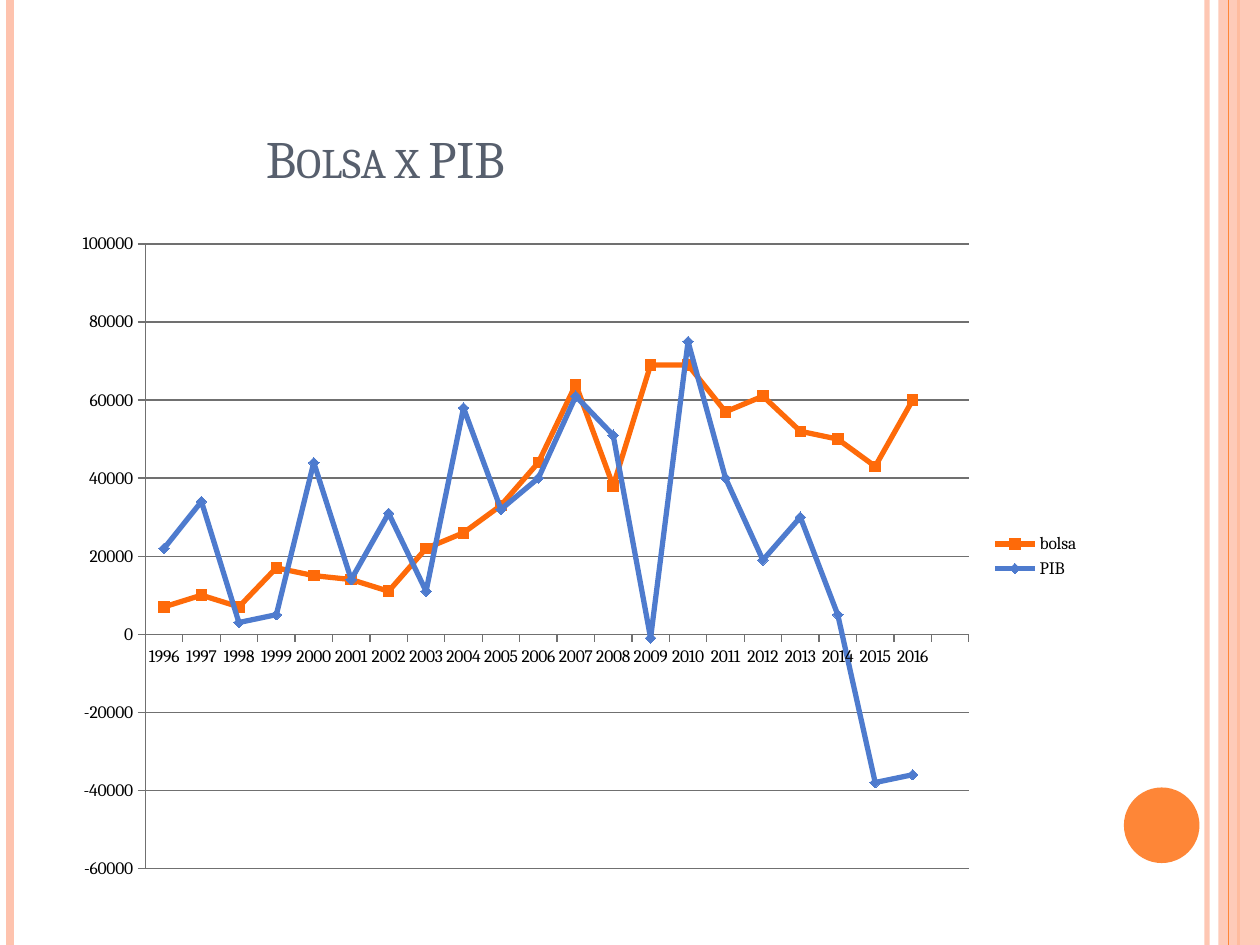
from lxml.etree import SubElement
from pptx import Presentation
from pptx.chart.data import CategoryChartData
from pptx.dml.color import RGBColor
from pptx.enum.chart import XL_CHART_TYPE as ChartType, XL_LEGEND_POSITION as LegendSide
from pptx.enum.chart import XL_MARKER_STYLE as Marker, XL_TICK_MARK as Tick
from pptx.enum.shapes import MSO_CONNECTOR as Connector, MSO_SHAPE as Shape
from pptx.enum.text import MSO_ANCHOR as Anchor, PP_ALIGN as Align
from pptx.oxml import parse_xml
from pptx.oxml.ns import nsdecls, qn
from pptx.util import Inches, Pt

ORANGE = RGBColor(0xFE, 0x86, 0x37)
PEACH = RGBColor(0xFE, 0xC3, 0xAE)
BLUE = RGBColor(0x75, 0x98, 0xD9)
SLATE = RGBColor(0x57, 0x5F, 0x6D)
GREY = RGBColor(0x70, 0x70, 0x70)
BLACK = RGBColor(0, 0, 0)
FONT = "Cambria"
WIDTH, HEIGHT = 10, 7.5

YEARS = [str(year) for year in range(1996, 2017)] + [""]
# name, colour, marker, marker size, values in thousands
SERIES = [
    ("bolsa", ORANGE, Marker.SQUARE, 6,
     [7, 10, 7, 17, 15, 14, 11, 22, 26, 33, 44, 64, 38, 69, 69, 57, 61, 52, 50, 43, 60]),
    ("PIB", BLUE, Marker.DIAMOND, 6,
     [22, 34, 3, 5, 44, 14, 31, 11, 58, 32, 40, 61, 51, -1, 75, 40, 19, 30, 5, -38, -36]),
]


def apply(target, formats):
    for name, value in formats.items():
        setattr(target, name, value)


def set_alpha(fill_parent, percent):
    color = next(fill_parent.iter(qn("a:srgbClr")))
    SubElement(color, qn("a:alpha")).set("val", str(percent * 1000))


def add_stripe(page, x, color, width, alpha=100):
    """Draw a vertical line over the full height of the slide."""
    stripe = page.shapes.add_connector(
        Connector.STRAIGHT, Inches(x), 0, Inches(x), Inches(HEIGHT))
    stripe.line.color.rgb = color
    stripe.line.width = Pt(width)
    properties = stripe._element.spPr
    if alpha < 100:
        set_alpha(properties, alpha)
    SubElement(properties, qn("a:effectLst"))


def add_solid(page, kind, box, color, alpha=100):
    solid = page.shapes.add_shape(kind, *map(Inches, box))
    solid.shadow.inherit = False
    solid.fill.solid()
    solid.fill.fore_color.rgb = color
    solid.line.fill.background()
    if alpha < 100:
        set_alpha(solid._element.spPr, alpha)


def add_decoration(page):
    add_stripe(page, 9.58, PEACH, 3, alpha=93)
    add_stripe(page, 0.08, PEACH, 4.5)
    add_stripe(page, 9.83, ORANGE, 1.5)
    add_solid(page, Shape.RECTANGLE, (9.67, 0, 0.33, HEIGHT), PEACH, alpha=87)
    add_stripe(page, 9.75, ORANGE, 0.75)
    add_solid(page, Shape.OVAL, (8.92, 6.25, 0.6, 0.6), ORANGE)


def add_title(page, box, text):
    title = page.shapes.title
    apply(title, dict(zip(("left", "top", "width", "height"), map(Inches, box))))
    apply(title.text_frame, {"vertical_anchor": Anchor.BOTTOM, "word_wrap": True})
    para = title.text_frame.paragraphs[0]
    para.alignment = Align.LEFT
    span = para.add_run()
    span.text = text
    apply(span.font, {"name": FONT, "size": Pt(30)})
    span.font.color.rgb = SLATE
    span.font._element.set("cap", "small")


def set_plot_area(chart, shares):
    """Fix the inner plot area as shares (x, y, w, h) of the chart."""
    plot_area = chart._chartSpace.chart.plotArea
    for old in plot_area.findall(qn("c:layout")):
        plot_area.remove(old)
    modes = '<c:xMode val="edge"/><c:yMode val="edge"/>'
    sizes = "".join(f'<c:{key} val="{share}"/>' for key, share in zip("xywh", shares))
    plot_area.insert(0, parse_xml(
        f'<c:layout {nsdecls("c")}><c:manualLayout><c:layoutTarget val="inner"/>'
        f"{modes}{sizes}</c:manualLayout></c:layout>"))


def style_line(line, color, width):
    line.color.rgb = color
    line.width = Pt(width)


def add_line_chart(page, box):
    data = CategoryChartData()
    data.categories = YEARS
    for name, _, _, _, thousands in SERIES:
        data.add_series(name, [value * 1000 for value in thousands] + [None])
    chart = page.shapes.add_chart(ChartType.LINE_MARKERS, *map(Inches, box), data).chart
    apply(chart, {"has_title": False, "has_legend": True})
    apply(chart.font, {"name": FONT, "size": Pt(10)})
    chart.font.color.rgb = BLACK
    apply(chart.legend, {"position": LegendSide.RIGHT, "include_in_layout": False})
    set_plot_area(chart, (0.08, 0.035, 0.8, 0.93))

    apply(chart.value_axis, {
        "minimum_scale": -60000, "maximum_scale": 100000, "major_unit": 20000,
        "has_major_gridlines": True})
    style_line(chart.value_axis.major_gridlines.format.line, GREY, 0.75)
    for axis in (chart.category_axis, chart.value_axis):
        apply(axis, {"major_tick_mark": Tick.OUTSIDE, "minor_tick_mark": Tick.NONE})
        style_line(axis.format.line, GREY, 0.75)

    chart.plots[0].vary_by_categories = False
    for series, (_, color, marker, size, _) in zip(chart.plots[0].series, SERIES):
        series.smooth = False
        style_line(series.format.line, color, 3)
        series.format.line.color.brightness = -0.15
        apply(series.marker, {"style": marker, "size": size})
        face = series.marker.format
        face.fill.solid()
        face.fill.fore_color.rgb = color
        face.fill.fore_color.brightness = -0.15
        face.line.fill.background()


def main():
    deck = Presentation()
    deck.slide_width, deck.slide_height = Inches(WIDTH), Inches(HEIGHT)
    page = deck.slides.add_slide(deck.slide_layouts.get_by_name("Title Only"))
    add_decoration(page)
    add_title(page, (2.01, 0.3, 6.66, 1.25), "Bolsa x PIB")
    add_line_chart(page, (0.5, 1.75, 8.17, 5.33))
    deck.save("out.pptx")


if __name__ == "__main__":
    main()
